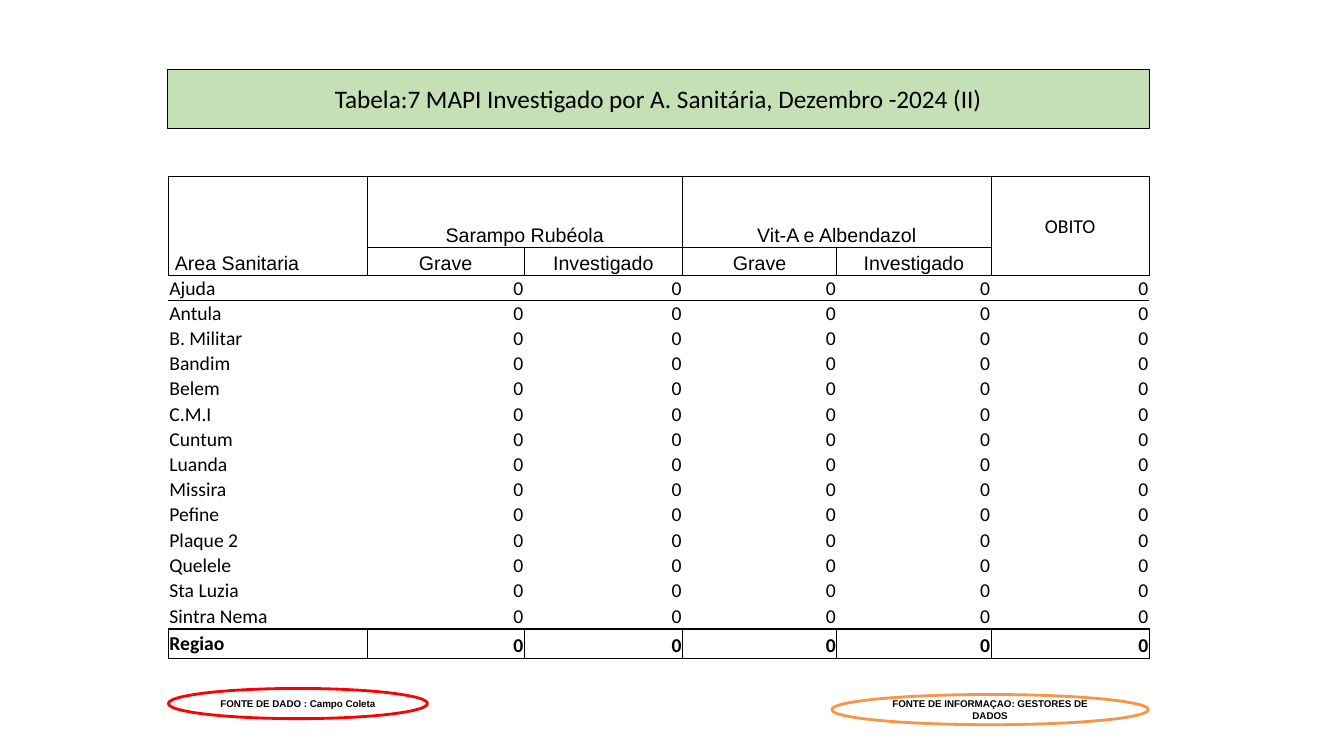
from lxml import etree
from pptx import Presentation
from pptx.dml.color import RGBColor
from pptx.enum.shapes import MSO_SHAPE as SHAPE
from pptx.enum.text import MSO_ANCHOR as ANCHOR, PP_ALIGN as ALIGN
from pptx.oxml.ns import qn
from pptx.util import Inches, Pt

# Content
TITLE = "Tabela:7 MAPI Investigado por A. Sanitária, Dezembro -2024 (II)"
HEADER = [
    ["\u00a0Area Sanitaria", "Sarampo Rubéola", "", "Vit-A e Albendazol", "", "OBITO"],
    ["", "Grave", "Investigado", "Grave", "Investigado", ""],
]
AREAS = ["Ajuda", "Antula", "B. Militar", "Bandim", "Belem", "C.M.I", "Cuntum",
         "Luanda", "Missira", "Pefine", "Plaque 2", "Quelele", "Sta Luzia",
         "Sintra Nema"]
ZEROS = ["0"] * 5
ROWS = HEADER + [[area] + ZEROS for area in AREAS] + [["Regiao"] + ZEROS]
MERGES = [((0, 0), (1, 0)), ((0, 1), (0, 2)), ((0, 3), (0, 4)), ((0, 5), (1, 5))]
COL_WIDTHS = [1.97, 1.56, 1.57, 1.53, 1.53, 1.57]
ROW_HEIGHTS = [0.7, 0.28] + [0.25] * 13 + [0.26, 0.29]

# kind, (left, top, width, height), fill, line, line width, text, size, font, bold
SHAPES = [
    (SHAPE.RECTANGLE, (1.66, 0.69, 9.74, 0.58), "C5E0B4", "000000", 0.5,
     TITLE, 18, "Calibri", False),
    (SHAPE.OVAL, (1.67, 6.83, 2.57, 0.3), None, "FF0000", 2,
     "FONTE DE DADO : Campo Coleta", 7, "Arial", True),
    (SHAPE.OVAL, (8.25, 6.89, 3.14, 0.3), "FFFFFF", "F79646", 2,
     "FONTE DE INFORMAÇAO: GESTORES DE DADOS", 7, "Arial", True),
]
NO_STYLE = "{2D5ABB26-0587-4C30-8999-92F81FD0307C}"


def rgb(value):
    return RGBColor.from_string(value)


def format_text(tf, size, font, bold, align):
    p = tf.paragraphs[0]
    p.alignment = align
    for r in p.runs:
        r.font.size, r.font.name, r.font.bold = Pt(size), font, bold
        r.font.color.rgb = rgb("000000")


def add_border(cell, side, width):
    ln = etree.SubElement(cell._tc.get_or_add_tcPr(), qn(f"a:ln{side}"),
                          w=str(Pt(width)))
    fill = etree.SubElement(ln, qn("a:solidFill"))
    etree.SubElement(fill, qn("a:srgbClr"), val="000000")


prs = Presentation()
prs.slide_width, prs.slide_height = Inches(13.33), Inches(7.5)
s = prs.slides.add_slide(prs.slide_layouts[6])

# Title bar and source labels
for kind, box, fill, line, width, text, size, font, bold in SHAPES:
    sp = s.shapes.add_shape(kind, *map(Inches, box))
    sp.shadow.inherit = False
    if fill:
        sp.fill.solid()
        sp.fill.fore_color.rgb = rgb(fill)
    else:
        sp.fill.background()
    sp.line.color.rgb = rgb(line)
    sp.line.width = Pt(width)
    tf = sp.text_frame
    tf.word_wrap = True
    tf.vertical_anchor = ANCHOR.MIDDLE
    tf.text = text
    format_text(tf, size, font, bold, ALIGN.CENTER)

# Table frame
n_rows, n_cols = len(ROWS), len(COL_WIDTHS)
frame = s.shapes.add_table(n_rows, n_cols, Inches(1.67), Inches(1.75),
                           Inches(sum(COL_WIDTHS)), Inches(sum(ROW_HEIGHTS)))
table = frame.table
table.first_row = table.horz_banding = False
table._tbl.tblPr.find(qn("a:tableStyleId")).text = NO_STYLE
for column, width in zip(table.columns, COL_WIDTHS):
    column.width = Inches(width)
for row, height in zip(table.rows, ROW_HEIGHTS):
    row.height = Inches(height)
for first, last in MERGES:
    table.cell(*first).merge(table.cell(*last))

# Table cells: heavy rules frame the header and total, the areas are open
total = n_rows - 1
heavy_rows, heavy_cols = {0, len(HEADER), total, n_rows}, {0, n_cols}
for i, row in enumerate(ROWS):
    is_header, is_total = i < len(HEADER), i == total
    boxed = is_header or is_total
    for j, text in enumerate(row):
        cell = table.cell(i, j)
        cell.margin_left = cell.margin_right = cell.margin_top = Inches(0.01)
        cell.margin_bottom = 0
        if cell.is_spanned:
            continue
        centred = text == "OBITO" or (is_total and j == 0)
        cell.vertical_anchor = ANCHOR.MIDDLE if centred else ANCHOR.BOTTOM
        cell.text_frame.text = text
        align = ALIGN.LEFT if j == 0 else ALIGN.CENTER if is_header else ALIGN.RIGHT
        font = "Arial" if is_header and text != "OBITO" else "Calibri"
        format_text(cell.text_frame, 14, font, is_total, align)

        edges = [("L", j, heavy_cols), ("R", j + cell.span_width * cell.is_merge_origin
                                        + (not cell.is_merge_origin), heavy_cols),
                 ("T", i, heavy_rows), ("B", i + cell.span_height * cell.is_merge_origin
                                        + (not cell.is_merge_origin), heavy_rows)]
        for side, edge, heavy in edges:
            is_heavy = edge in heavy
            if boxed or (is_heavy and side in "TB"):
                add_border(cell, side, 1 if is_heavy else 0.5)
        if boxed or j > 0:
            cell.fill.solid()
            cell.fill.fore_color.rgb = rgb("FFFFFF")

prs.save("out.pptx")
